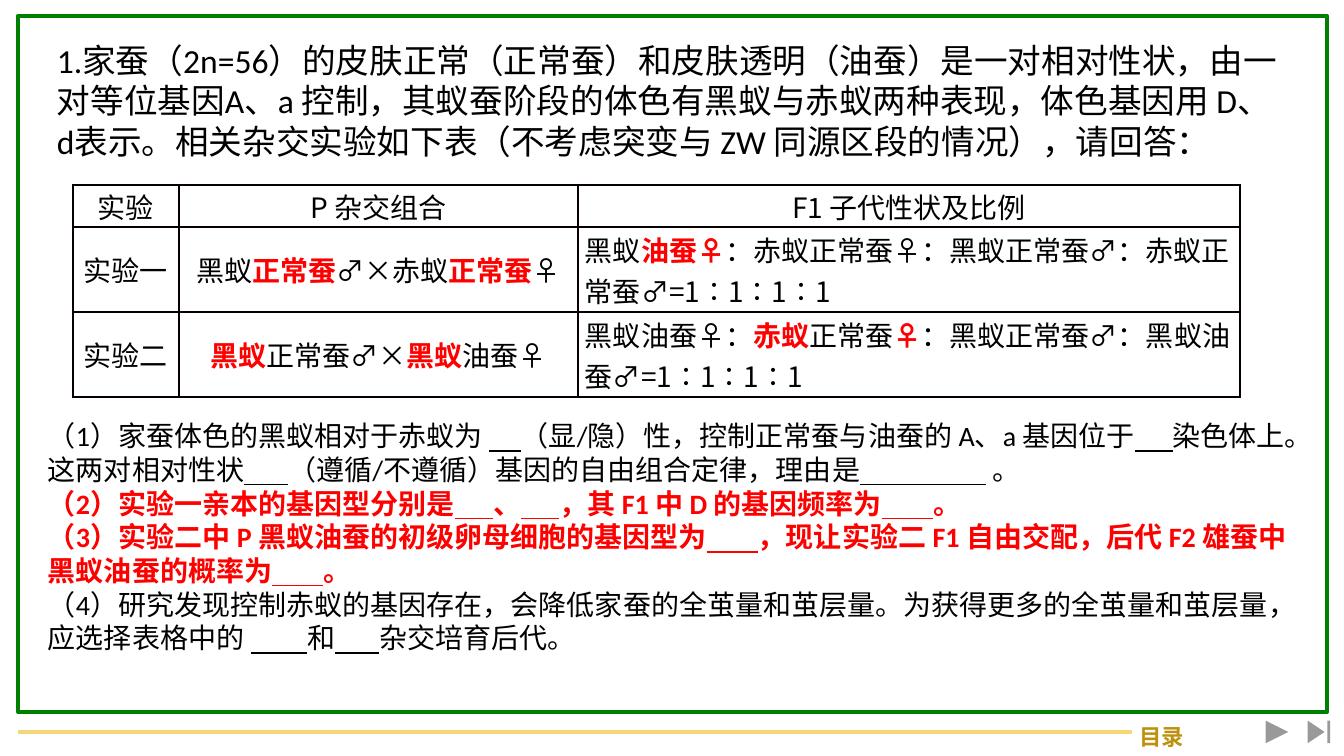
import pptx
import pptx.util
import pptx.dml.color
import pptx.enum.shapes
import pptx.enum.text
import pptx.oxml
import pptx.oxml.ns
from dataclasses import dataclass

SHAPE = pptx.enum.shapes.MSO_SHAPE
ALIGN = pptx.enum.text.PP_ALIGN
MIDDLE = pptx.enum.text.MSO_ANCHOR.MIDDLE


@dataclass(frozen=True)
class Theme:
    frame: str = "008000"
    rule: str = "F5D679"
    menu: str = "BD910E"
    button: str = "FFFFFF"
    ink: str = "000000"
    mark: str = "FF0000"
    grid: str = "080000"
    latin: str = "Calibri"
    cjk: str = "Noto Sans CJK SC"
    stem_size: int = 24
    body_size: int = 20
    menu_size: int = 16
    leading: float = 1.2
    line: int = 3
    grid_line: int = 1


THEME = Theme()

STEM = (
    "1.家蚕（2n=56）的皮肤正常（正常蚕）和皮肤透明（油蚕）是一对相对性状，由一对等位基因A、a 控制，"
    "其蚁蚕阶段的体色有黑蚁与赤蚁两种表现，体色基因用 D、d表示。"
    "相关杂交实验如下表（不考虑突变与 ZW 同源区段的情况），请回答："
)
CROSSES = [
    ["实验", "P 杂交组合", "F1 子代性状及比例"],
    ["实验一", "黑蚁|正常蚕|♂×赤蚁|正常蚕|♀",
     "黑蚁|油蚕♀|：赤蚁正常蚕♀：黑蚁正常蚕♂：赤蚁正常蚕♂=1∶1∶1∶1"],
    ["实验二", "|黑蚁|正常蚕♂×|黑蚁|油蚕♀",
     "黑蚁油蚕♀：|赤蚁|正常蚕|♀|：黑蚁正常蚕♂：黑蚁油蚕♂=1∶1∶1∶1"],
]
QUESTIONS = [
    ("ink", "（1）家蚕体色的黑蚁相对于赤蚁为 |5|（显/隐）性，控制正常蚕与油蚕的 A、a 基因位于|6|"
            "染色体上。这两对相对性状|7|（遵循/不遵循）基因的自由组合定律，理由是|20| 。"),
    ("mark", "（2）实验一亲本的基因型分别是|6|、|6|，其 F1 中 D 的基因频率为|8|。"),
    ("mark", "（3）实验二中 P 黑蚁油蚕的初级卵母细胞的基因型为|8|，"
             "现让实验二 F1 自由交配，后代 F2 雄蚕中黑蚁油蚕的概率为|8|。"),
    ("ink", "（4）研究发现控制赤蚁的基因存在，会降低家蚕的全茧量和茧层量。"
            "为获得更多的全茧量和茧层量，应选择表格中的 |9|和|7|杂交培育后代。"),
]


def px(n):
    return round(n * 914400 / 100.8)


def rgb(value):
    return pptx.dml.color.RGBColor.from_string(value)


def set_font(font, name, size, color, bold=False):
    font.name = name
    font.size = pptx.util.Pt(size)
    font.color.rgb = rgb(color)
    font.bold = bold


def add_runs(p, text, style):
    for i, part in enumerate(text.split("|")):
        if part:
            r = p.add_run()
            r.text = part
            if i % 2:
                style(r)


def mark_red(r):
    r.font.bold = True
    r.font.color.rgb = rgb(THEME.mark)


def make_blank(r):
    r.text = " " * int(r.text)
    r.font.underline = True


def add_plain_shape(s, kind, x, y, w, h, fill=None):
    sp = s.shapes.add_shape(kind, px(x), px(y), px(w), px(h))
    sp.shadow.inherit = False
    sp.line.fill.background()
    if fill:
        sp.fill.solid()
        sp.fill.fore_color.rgb = rgb(fill)
    else:
        sp.fill.background()
    return sp


def add_frame(s, x, y, w, h):
    sp = add_plain_shape(s, SHAPE.RECTANGLE, x, y, w, h)
    sp.line.color.rgb = rgb(THEME.frame)
    sp.line.width = pptx.util.Pt(THEME.line)


def add_footer(s, x, y, w, h):
    mid = y + h // 2
    rule = s.shapes.add_connector(
        pptx.enum.shapes.MSO_CONNECTOR.STRAIGHT, px(x), px(mid), px(x + w - 202), px(mid))
    rule.line.color.rgb = rgb(THEME.rule)
    rule.line.width = pptx.util.Pt(THEME.line)
    pptx.oxml.parse_xml  # noqa
    rule._element.spPr.append(
        pptx.oxml.parse_xml(f"<a:effectLst {pptx.oxml.ns.nsdecls('a')}/>"))
    for kind, right in ((SHAPE.ACTION_BUTTON_FORWARD_OR_NEXT, 72),
                        (SHAPE.ACTION_BUTTON_END, 30)):
        add_plain_shape(s, kind, x + w - right, y, 30, 30, THEME.button)
    menu = add_plain_shape(s, SHAPE.ROUNDED_RECTANGLE, x + w - 214, y + 7, 83, 25)
    tf = menu.text_frame
    tf.margin_left = tf.margin_right = tf.margin_top = tf.margin_bottom = 0
    tf.vertical_anchor = MIDDLE
    p = tf.paragraphs[0]
    p.text = "目录"
    p.alignment = ALIGN.CENTER
    set_font(p.font, THEME.cjk, THEME.menu_size, THEME.menu, True)


def add_text(s, x, y, w, h, paragraphs, size):
    tf = s.shapes.add_textbox(px(x), px(y), px(w), px(h)).text_frame
    tf.word_wrap = True
    for i, (tone, text) in enumerate(paragraphs):
        p = tf.add_paragraph() if i else tf.paragraphs[0]
        p.line_spacing = pptx.util.Pt(size * THEME.leading)
        set_font(p.font, THEME.latin, size, getattr(THEME, tone), tone == "mark")
        add_runs(p, text, make_blank)


def add_borders(cell):
    tcPr = cell._tc.get_or_add_tcPr()
    width = pptx.util.Pt(THEME.grid_line)
    for i, side in enumerate("LRTB"):
        tcPr.insert(i, pptx.oxml.parse_xml(
            f'<a:ln{side} {pptx.oxml.ns.nsdecls("a")} w="{width}"><a:solidFill>'
            f'<a:srgbClr val="{THEME.grid}"/></a:solidFill></a:ln{side}>'))


def add_cross_table(s, x, y, w, h):
    cols = [106, 399, w - 505]
    rows = [42, (h - 42) // 2, (h - 42) // 2]
    table = s.shapes.add_table(len(rows), len(cols), px(x), px(y), px(w), px(h)).table
    table.first_row = table.horz_banding = False
    for column, width in zip(table.columns, cols):
        column.width = px(width)
    for i, height in enumerate(rows):
        table.rows[i].height = px(height)
        for j, text in enumerate(CROSSES[i]):
            cell = table.cell(i, j)
            cell.fill.background()
            cell.margin_left = cell.margin_right = px(7)
            cell.margin_top = cell.margin_bottom = 0
            cell.vertical_anchor = MIDDLE
            add_borders(cell)
            p = cell.text_frame.paragraphs[0]
            p.alignment = ALIGN.LEFT if i and j == 2 else ALIGN.CENTER
            set_font(p.font, THEME.cjk, THEME.body_size, THEME.ink)
            add_runs(p, text, mark_red)


def main():
    prs = pptx.Presentation()
    prs.slide_width, prs.slide_height = px(1344), px(756)
    s = prs.slides.add_slide(prs.slide_layouts[6])
    add_frame(s, 18, 16, 1309, 696)
    add_footer(s, 18, 717, 1316, 30)
    add_text(s, 47, 35, 1242, 132, [("ink", STEM)], THEME.stem_size)
    add_cross_table(s, 73, 185, 1167, 212)
    add_text(s, 38, 414, 1260, 278, QUESTIONS, THEME.body_size)
    prs.save("out.pptx")


if __name__ == "__main__":
    main()
